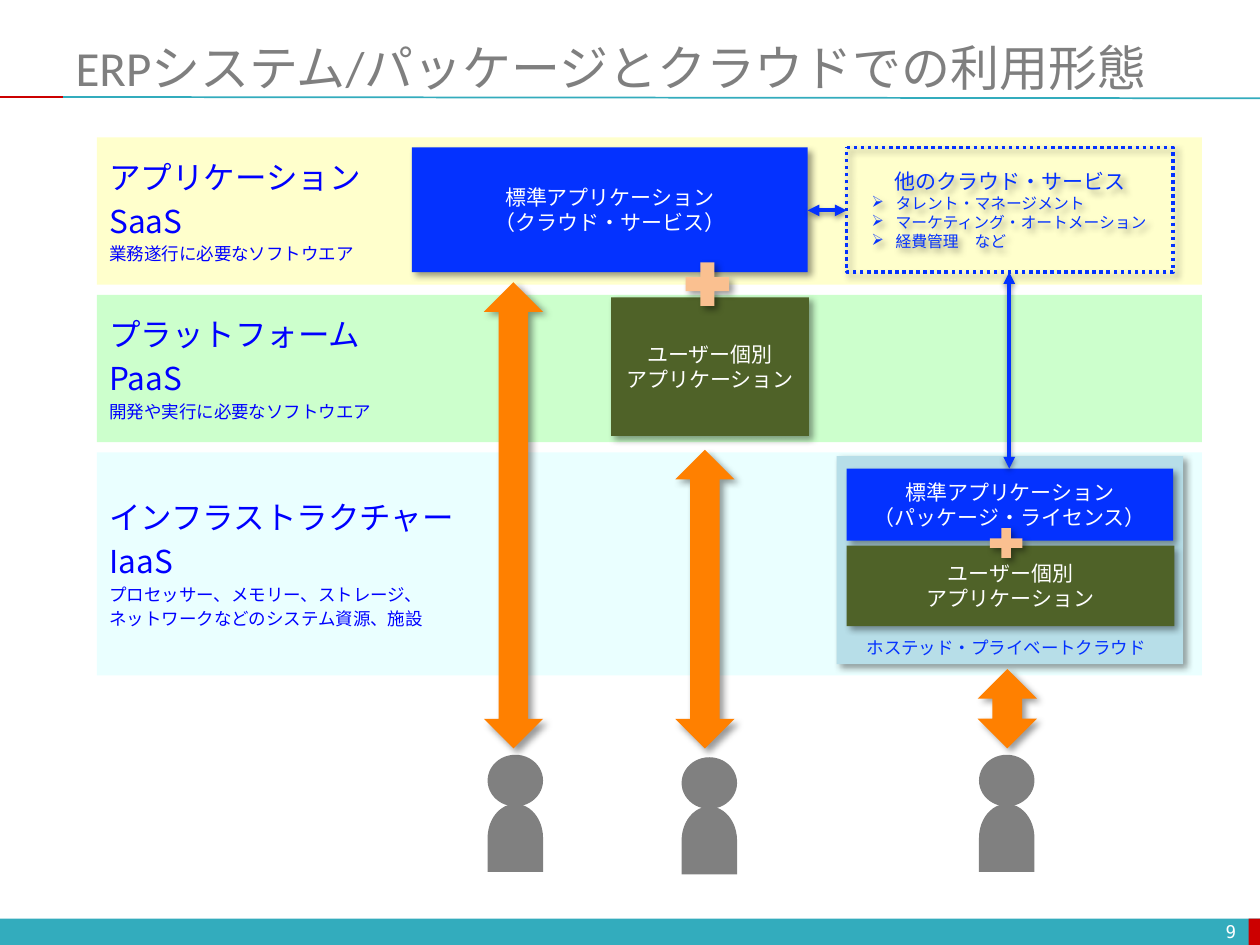
from lxml.etree import SubElement
from pptx import Presentation
from pptx.dml.color import RGBColor
from pptx.enum.dml import MSO_LINE
from pptx.enum.shapes import MSO_CONNECTOR, MSO_SHAPE
from pptx.enum.text import MSO_ANCHOR, MSO_AUTO_SIZE, PP_ALIGN
from pptx.oxml.ns import qn
from pptx.util import Inches, Pt

THEME = {
    "teal": "33ACBD", "red": "CC0000", "title": "7F7F7F", "white": "FFFFFF",
    "band_text": "0000FF", "blue": "0432FF", "olive": "4F6228", "host": "B7DEE8",
    "person": "808080", "arrow": "FF8000", "plus": "FAC090", "black": "000000",
    "saas": "FFFFCC", "paas": "CCFFCC", "iaas": "EAFFFF",
    "font": "Noto Sans CJK JP", "title_font": "Calibri", "page_font": "DejaVu Sans Mono",
    "title_size": 28, "band_size": 18, "box_size": 12, "small": 10, "bullet_size": 9,
}
TITLE = "ERPシステム/パッケージとクラウドでの利用形態"
PAGE = "9"
HOST_LABEL = "ホステッド・プライベートクラウド"

BAND_LEFT, BAND_WIDTH, BAND_TOP, BAND_GAP = 0.77, 8.77, 1.09, 0.08
BANDS = [  # colour, height, headings, details
    ("saas", 1.17, ["アプリケーション", "SaaS"], ["業務遂行に必要なソフトウエア"]),
    ("paas", 1.17, ["プラットフォーム", "PaaS"], ["開発や実行に必要なソフトウエア"]),
    ("iaas", 1.77, ["インフラストラクチャー", "IaaS"],
     ["プロセッサー、メモリー、ストレージ、", "ネットワークなどのシステム資源、施設"]),
]
CUSTOM_APP = ["ユーザー個別", "アプリケーション"]
BOXES = [  # colour, (left, top, width, height), lines
    ("blue", (3.27, 1.17, 3.14, 0.99), ["標準アプリケーション", "（クラウド・サービス）"]),
    ("olive", (4.85, 2.36, 1.57, 1.1), CUSTOM_APP),
    ("host", (6.64, 3.62, 2.75, 1.65), []),
    ("blue", (6.72, 3.72, 2.59, 0.57), ["標準アプリケーション", "（パッケージ・ライセンス）"]),
    ("olive", (6.72, 4.33, 2.6, 0.64), CUSTOM_APP),
]
OTHER_CLOUD = (6.72, 1.17, 2.59, 0.99)
OTHER_TITLE = "他のクラウド・サービス"
OTHER_SERVICES = ["タレント・マネージメント", "マーケティング・オートメーション", "経費管理　など"]

PEOPLE = [(3.87, 5.99), (5.41, 6.01), (7.77, 5.99)]  # left and top of each head
ACCESS_ARROWS = [(3.84, 2.24), (5.36, 3.57), (7.76, 5.31)]  # left, top
ARROW_WIDTH, ARROW_BOTTOM = 0.47, 5.94
PLUSES = [(5.38, 2.02, 0.47, 0.47), (7.81, 4.15, 0.35, 0.32)]
LINKS = [((6.41, 1.67), (6.72, 1.67)), ((8.01, 3.72), (8.01, 2.16))]
BOX_SHADOW = {"alpha": 40, "blur": 4, "dist": 3, "angle": 45}
LINK_SHADOW = {"alpha": 38, "blur": 3.1, "dist": 1.6, "angle": 90}


def rgb(name):
    return RGBColor.from_string(THEME[name])


def add_shadow(effects, alpha, blur, dist, angle):
    outer = SubElement(effects, qn("a:outerShdw"), blurRad=str(Pt(blur)), dist=str(Pt(dist)),
                       dir=str(angle * 60000), algn="tl", rotWithShape="0")
    colour = SubElement(outer, qn("a:srgbClr"), val=THEME["black"])
    SubElement(colour, qn("a:alpha"), val=str(alpha * 1000))


def add_block(shapes, kind, place, fill=None, shadow=None):
    block = shapes.add_shape(kind, *map(Inches, place))
    if fill:
        block.fill.solid()
        block.fill.fore_color.rgb = rgb(fill)
    else:
        block.fill.background()
    block.line.fill.background()
    block.shadow.inherit = False
    if shadow:
        add_shadow(block._element.spPr.find(qn("a:effectLst")), **shadow)
    if kind == MSO_SHAPE.ROUNDED_RECTANGLE:
        block.adjustments[0] = 0
    return block


def add_line(shapes, start, end, colour, width):
    line = shapes.add_connector(MSO_CONNECTOR.STRAIGHT, *map(Inches, start + end))
    line.line.color.rgb = rgb(colour)
    line.line.width = Pt(width)
    effects = SubElement(line._element.spPr, qn("a:effectLst"))
    return line, effects


def write(shape, lines, colour, align, font="font", wrap=False, before=0, anchor=MSO_ANCHOR.MIDDLE):
    """Fill a shape with (text, size name, bulleted) lines; before is a share of the type size."""
    frame = shape.text_frame
    frame_format = {"word_wrap": wrap, "auto_size": MSO_AUTO_SIZE.NONE, "vertical_anchor": anchor}
    for name, value in frame_format.items():
        setattr(frame, name, value)
    for index, (text, size, bulleted) in enumerate(lines):
        paragraph = frame.add_paragraph() if index else frame.paragraphs[0]
        paragraph.alignment = PP_ALIGN.LEFT if bulleted else align
        if index and before:
            paragraph.space_before = Pt(before * THEME[size])
        if bulleted:
            paragraph.level = 1
            properties = paragraph._p.get_or_add_pPr()
            properties.set("marL", str(Inches(0.29)))
            properties.set("indent", str(Inches(-0.19)))
            SubElement(properties, qn("a:buChar"), char="➢")
        run = paragraph.add_run()
        run.text = text
        for name, value in {"size": Pt(THEME[size]), "name": THEME[font]}.items():
            setattr(run.font, name, value)
        run.font.color.rgb = rgb(colour)
        SubElement(run._r.get_or_add_rPr(), qn("a:ea"), typeface=THEME["font"])


def add_label(shapes, place, text, colour, align, **options):
    label = shapes.add_textbox(*map(Inches, place))
    write(label, [(text, "small", False)], colour, align, **options)


def add_person(shapes, left, top):
    person = shapes.add_group_shape().shapes
    add_block(person, MSO_SHAPE.OVAL, (left, top, 0.44, 0.41), "person")
    body = add_block(person, MSO_SHAPE.FLOWCHART_DELAY, (left - 0.05, top + 0.44, 0.54, 0.44), "person")
    body.rotation = 270


def add_frame(slide):
    shapes = slide.shapes
    add_block(shapes, MSO_SHAPE.RECTANGLE, (0, 7.29, 10, 0.22), "teal")
    add_block(shapes, MSO_SHAPE.RECTANGLE, (9.91, 7.29, 0.1, 0.22), "red")
    add_line(shapes, (0.5, 0.77), (10, 0.78), "teal", 1)
    add_line(shapes, (0, 0.77), (0.5, 0.77), "red", 1)
    title = shapes.title
    place = {"left": 0.5, "top": 0.3, "width": 9.5, "height": 0.46}
    for name, value in place.items():
        setattr(title, name, Inches(value))
    write(title, [(TITLE, "title_size", False)], "title", PP_ALIGN.LEFT, "title_font", wrap=True)
    add_label(shapes, (7.58, 7.27, 2.33, 0.24), PAGE, "white", PP_ALIGN.RIGHT,
              font="page_font", wrap=True)


def add_bands(shapes):
    top = BAND_TOP
    for colour, height, headings, details in BANDS:
        band = add_block(shapes, MSO_SHAPE.RECTANGLE, (BAND_LEFT, top, BAND_WIDTH, height), colour)
        lines = [(text, "band_size", False) for text in headings]
        lines += [(text, "small", False) for text in details]
        write(band, lines, "band_text", PP_ALIGN.LEFT, wrap=True, before=0.2)
        top += height + BAND_GAP


def add_services(shapes):
    for colour, place, lines in BOXES:
        box = add_block(shapes, MSO_SHAPE.ROUNDED_RECTANGLE, place, colour, BOX_SHADOW)
        write(box, [(text, "box_size", False) for text in lines], "white", PP_ALIGN.CENTER)
    add_label(shapes, (6.76, 5.01, 2.45, 0.27), HOST_LABEL, "blue", PP_ALIGN.CENTER,
              anchor=MSO_ANCHOR.TOP)


def add_access(shapes):
    for left, top in PEOPLE:
        add_person(shapes, left, top)
    for left, top in ACCESS_ARROWS:
        add_block(shapes, MSO_SHAPE.UP_DOWN_ARROW,
                  (left, top, ARROW_WIDTH, ARROW_BOTTOM - top), "arrow", BOX_SHADOW)
    for place in PLUSES:
        add_block(shapes, MSO_SHAPE.MATH_PLUS, place, "plus", BOX_SHADOW)


def add_other_cloud(shapes):
    box = add_block(shapes, MSO_SHAPE.ROUNDED_RECTANGLE, OTHER_CLOUD, shadow=BOX_SHADOW)
    box.line.color.rgb = rgb("blue")
    for name, value in {"width": Pt(2), "dash_style": MSO_LINE.ROUND_DOT}.items():
        setattr(box.line, name, value)
    lines = [(OTHER_TITLE, "box_size", False)]
    lines += [(text, "bullet_size", True) for text in OTHER_SERVICES]
    write(box, lines, "blue", PP_ALIGN.CENTER)
    for start, end in LINKS:
        link, effects = add_line(shapes, start, end, "blue", 2.25)
        for tip in ("a:headEnd", "a:tailEnd"):
            SubElement(link.line._get_or_add_ln(), qn(tip), type="triangle")
        add_shadow(effects, **LINK_SHADOW)


def main():
    deck = Presentation()
    deck.slide_width, deck.slide_height = Inches(10), Inches(7.5)
    slide = deck.slides.add_slide(deck.slide_layouts[5])
    add_frame(slide)
    for add_part in (add_bands, add_services, add_access, add_other_cloud):
        add_part(slide.shapes)
    deck.save("out.pptx")


if __name__ == "__main__":
    main()
